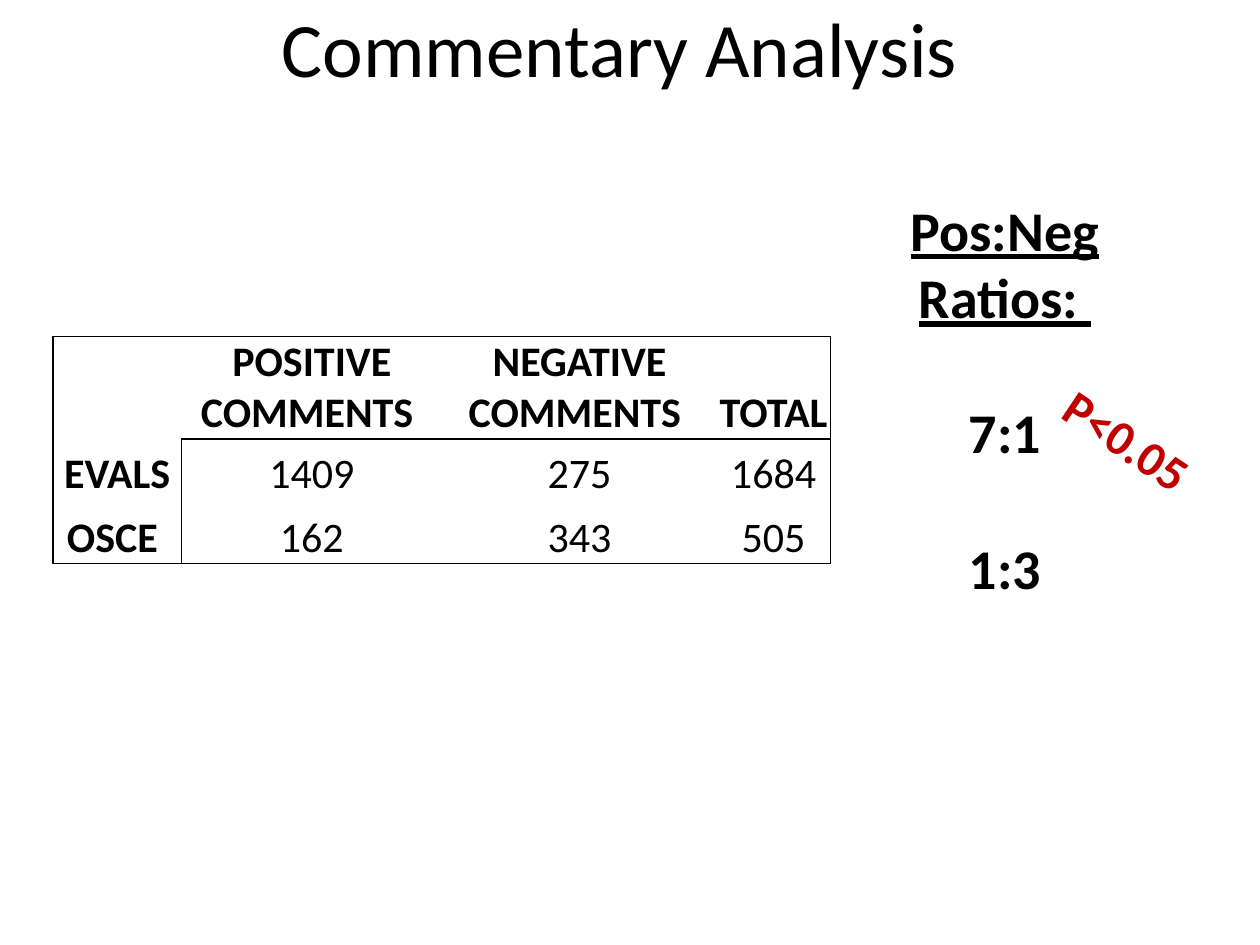
from lxml.etree import SubElement
from pptx import Presentation
from pptx.dml.color import RGBColor
from pptx.enum.text import MSO_ANCHOR, PP_ALIGN
from pptx.oxml.ns import qn
from pptx.util import Inches, Pt

TITLE = "Commentary Analysis"
ROWS = [
    ["", "POSITIVE COMMENTS ", "NEGATIVE COMMENTS ", "TOTAL"],
    ["EVALS", "1409", "275", "1684"],
    ["OSCE ", "162", "343", "505"],
]
COLUMN_WIDTHS = [1.02, 2.07, 2.18, 0.9]
ROW_HEIGHTS = [0.81, 0.48, 0.51]
RATIO_HEADING = "Pos:Neg Ratios: "
RATIOS = ["7:1", "1:3"]
SIGNIFICANCE = "P<0.05"
BLACK, RED = "000000", "C00000"
LEFT = 0.42


def color(value):
    return RGBColor.from_string(value)


def write(para, text, size, fill=BLACK, bold=False, underline=False,
          align=PP_ALIGN.CENTER, before=0):
    para.alignment = align
    para.space_before = Pt(before)
    span = para.add_run()
    span.text = text
    span.font.name = "Calibri"
    span.font.size = Pt(size)
    span.font.bold = bold
    span.font.underline = underline
    span.font.color.rgb = color(fill)


def add_box(slide, left, top, width, height):
    box = slide.shapes.add_textbox(*map(Inches, (left, top, width, height)))
    box.text_frame.word_wrap = True
    return box


def set_borders(cell, visible):
    properties = cell._tc.get_or_add_tcPr()
    for side in "LRTB":
        line = SubElement(properties, qn(f"a:ln{side}"), w=str(Pt(1)))
        if side in visible:
            fill = SubElement(line, qn("a:solidFill"))
            SubElement(fill, qn("a:srgbClr"), val=BLACK)
        else:
            SubElement(line, qn("a:noFill"))


def visible_sides(row, column):
    last_row, last_column = len(ROWS) - 1, len(COLUMN_WIDTHS) - 1
    rules = {
        "L": column == 0 or (column == 1 and row > 0),
        "R": column == last_column or (column == 0 and row > 0),
        "T": row == 0 or (row == 1 and column > 0),
        "B": row == last_row or (row == 0 and column > 0),
    }
    return [side for side, shown in rules.items() if shown]


def add_comment_table(slide):
    frame = slide.shapes.add_table(
        len(ROWS), len(COLUMN_WIDTHS), Inches(LEFT), Inches(2.67),
        Inches(sum(COLUMN_WIDTHS)), Inches(sum(ROW_HEIGHTS)))
    table = frame.table
    table.first_row = table.horz_banding = False
    for column, width in zip(table.columns, COLUMN_WIDTHS):
        column.width = Inches(width)
    for row, height in zip(table.rows, ROW_HEIGHTS):
        row.height = Inches(height)
    for r, texts in enumerate(ROWS):
        for c, text in enumerate(texts):
            cell = table.cell(r, c)
            cell.margin_left = cell.margin_right = 0
            cell.margin_top = cell.margin_bottom = 0
            cell.vertical_anchor = MSO_ANCHOR.BOTTOM
            set_borders(cell, visible_sides(r, c))
            cell.fill.background()
            if text:
                write(cell.text_frame.paragraphs[0], text, 24,
                      bold=r == 0 or c == 0)


def main():
    deck = Presentation()
    deck.slide_width, deck.slide_height = Inches(10), Inches(7.5)
    slide = deck.slides.add_slide(deck.slide_layouts[5])

    title = slide.shapes.title
    title.left, title.top = Inches(LEFT), Inches(-0.17)
    title.width, title.height = Inches(9), Inches(1.08)
    title.text_frame.vertical_anchor = MSO_ANCHOR.MIDDLE
    write(title.text_frame.paragraphs[0], TITLE, 44)

    add_comment_table(slide)

    ratios = add_box(slide, 6.64, 1.5, 2.67, 3.33).text_frame
    write(ratios.paragraphs[0], RATIO_HEADING, 32, bold=True, underline=True)
    for ratio in RATIOS:
        write(ratios.add_paragraph(), ratio, 32, bold=True, before=39)

    label = add_box(slide, 8.28, 3.28, 1.55, 0.57)
    label.rotation = 33.7
    write(label.text_frame.paragraphs[0], SIGNIFICANCE, 28, fill=RED,
          bold=True, align=PP_ALIGN.LEFT)

    deck.save("out.pptx")


if __name__ == "__main__":
    main()
